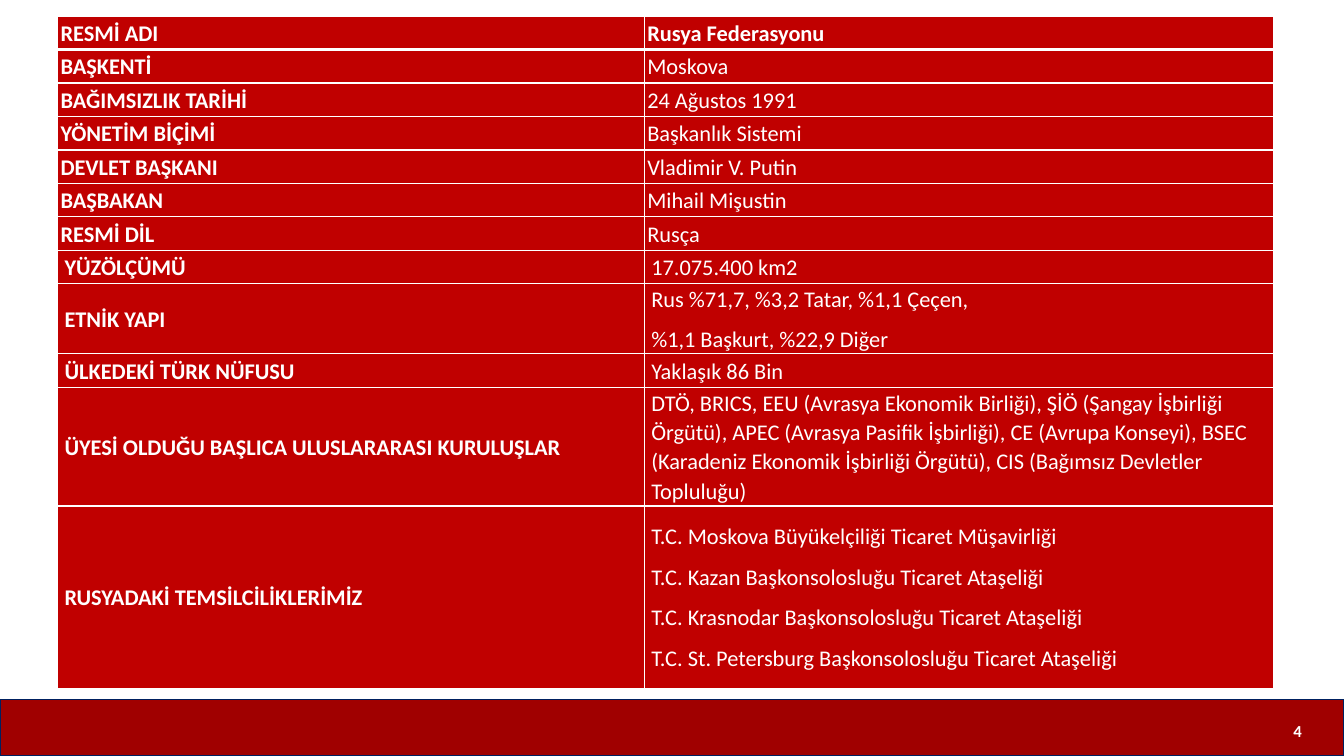
from lxml.etree import SubElement
from pptx import Presentation
from pptx.dml.color import RGBColor
from pptx.enum.shapes import MSO_SHAPE
from pptx.enum.text import MSO_ANCHOR, PP_ALIGN
from pptx.oxml.ns import qn
from pptx.util import Inches, Pt

WHITE, RED, DARK_RED, NAVY = "FFFFFF", "C00000", "A00000", "002060"

FACTS = [
    ("RESMİ ADI", ["Rusya Federasyonu"]),
    ("BAŞKENTİ", ["Moskova"]),
    ("BAĞIMSIZLIK TARİHİ", ["24 Ağustos 1991"]),
    ("YÖNETİM BİÇİMİ", ["Başkanlık Sistemi"]),
    ("DEVLET BAŞKANI", ["Vladimir V. Putin"]),
    ("BAŞBAKAN", ["Mihail Mişustin"]),
    ("RESMİ DİL", ["Rusça"]),
    ("YÜZÖLÇÜMÜ", ["17.075.400 km2"]),
    ("ETNİK YAPI", ["Rus %71,7, %3,2 Tatar, %1,1 Çeçen,", "%1,1 Başkurt, %22,9 Diğer"]),
    ("ÜLKEDEKİ TÜRK NÜFUSU", ["Yaklaşık 86 Bin"]),
    ("ÜYESİ OLDUĞU BAŞLICA ULUSLARARASI KURULUŞLAR", [
        "DTÖ, BRICS, EEU (Avrasya Ekonomik Birliği), ŞİÖ (Şangay İşbirliği "
        "Örgütü), APEC (Avrasya Pasifik İşbirliği), CE (Avrupa Konseyi), BSEC "
        "(Karadeniz Ekonomik İşbirliği Örgütü), CIS (Bağımsız Devletler Topluluğu)"]),
    ("RUSYADAKİ TEMSİLCİLİKLERİMİZ", [
        "T.C. Moskova Büyükelçiliği Ticaret Müşavirliği",
        "T.C. Kazan Başkonsolosluğu Ticaret Ataşeliği",
        "T.C. Krasnodar Başkonsolosluğu Ticaret Ataşeliği",
        "T.C. St. Petersburg Başkonsolosluğu Ticaret Ataşeliği"]),
]
COL_SHARES = [43.66, 46.81]
ROW_SHARES = [4.43] * 8 + [9.27, 4.43, 15.7, 24.1]
NARROW_INSET_ROWS = 7


def rgb(color):
    return RGBColor.from_string(color)


class Deck:
    font = "Calibri"

    def __init__(self):
        self.prs = Presentation()
        self.prs.slide_width, self.prs.slide_height = Inches(13.33), Inches(7.5)
        self.s = self.prs.slides.add_slide(self.prs.slide_layouts[6])

    def x(self, percent):
        return round(self.prs.slide_width * percent / 100)

    def y(self, percent):
        return round(self.prs.slide_height * percent / 100)

    def box(self, left, top, width, height):
        return self.x(left), self.y(top), self.x(width), self.y(height)

    def text(self, p, text, size, bold, align):
        p.alignment = align
        r = p.add_run()
        r.text = text
        r.font.name, r.font.size, r.font.bold = self.font, Pt(size), bold
        r.font.color.rgb = rgb(WHITE)

    def bar(self, area, fill, line):
        sp = self.s.shapes.add_shape(MSO_SHAPE.RECTANGLE, *self.box(*area))
        sp.shadow.inherit = False
        sp.fill.solid()
        sp.fill.fore_color.rgb = rgb(fill)
        sp.line.color.rgb = rgb(line)
        sp.line.width = Pt(1)

    def page_number(self, area, number):
        sp = self.s.shapes.add_shape(MSO_SHAPE.ROUND_2_SAME_RECTANGLE, *self.box(*area))
        sp.shadow.inherit = False
        sp.fill.background()
        sp.line.fill.background()
        tf = sp.text_frame
        tf.vertical_anchor = MSO_ANCHOR.MIDDLE
        self.text(tf.paragraphs[0], number, 12, True, PP_ALIGN.CENTER)

    def border(self, cell, side, width):
        ln = SubElement(cell._tc.get_or_add_tcPr(), qn(f"a:ln{side}"), w=str(Pt(width)))
        SubElement(SubElement(ln, qn("a:solidFill")), qn("a:srgbClr"), val=WHITE)

    def cell(self, cell, lines, bold, inset, top, bottom):
        for side, width in (("L", 1), ("R", 1), ("T", top), ("B", bottom)):
            self.border(cell, side, width)
        cell.fill.solid()
        cell.fill.fore_color.rgb = rgb(RED)
        cell.vertical_anchor = MSO_ANCHOR.MIDDLE
        cell.margin_left = cell.margin_right = Inches(inset)
        cell.margin_top = cell.margin_bottom = 0
        tf = cell.text_frame
        align = PP_ALIGN.JUSTIFY if len(lines) > 2 else PP_ALIGN.LEFT
        for i, line in enumerate(lines):
            p = tf.add_paragraph() if i else tf.paragraphs[0]
            p.line_spacing, p.space_after = 1.07, Pt(8)
            self.text(p, line, 16, bold, align)

    def table(self, left, top, facts):
        area = self.box(left, top, sum(COL_SHARES), sum(ROW_SHARES))
        table = self.s.shapes.add_table(len(facts), len(COL_SHARES), *area).table
        for col, share in zip(table.columns, COL_SHARES):
            col.width = self.x(share)
        for i, (label, values) in enumerate(facts):
            table.rows[i].height = self.y(ROW_SHARES[i])
            inset = 0.03 if i < NARROW_INSET_ROWS else 0.07
            edges = (3 if i == 1 else 1, 3 if i == 0 else 1)
            self.cell(table.cell(i, 0), [label], True, inset, *edges)
            self.cell(table.cell(i, 1), values, i == 0, inset, *edges)


def main():
    deck = Deck()
    deck.bar((0, 92.53, 100, 7.47), DARK_RED, NAVY)
    deck.page_number((94.75, 92.53, 3.6, 7.87), "4")
    deck.table(4.28, 2.13, FACTS)
    deck.prs.save("out.pptx")


if __name__ == "__main__":
    main()
